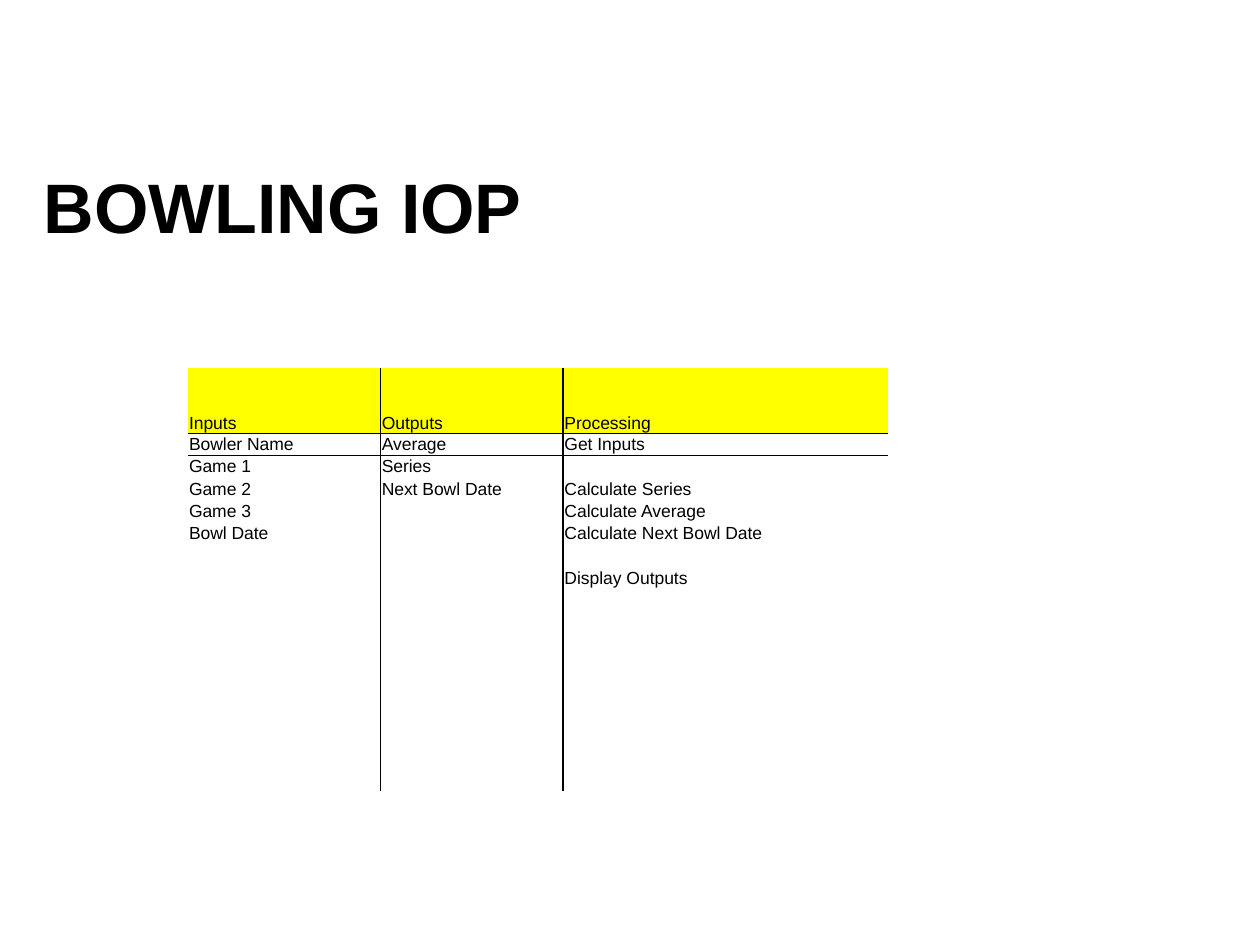
from pptx import Presentation
from pptx.util import Inches, Pt
from pptx.dml.color import RGBColor
from pptx.enum.text import MSO_ANCHOR as Anchor
from pptx.oxml.ns import qn
from lxml.etree import SubElement as Sub

# Content
TITLE = "BOWLING IOP"
COLS = [
    ("Inputs", 1.53, ["Bowler Name", "Game 1", "Game 2", "Game 3", "Bowl Date"]),
    ("Outputs", 1.45, ["Average", "Series", "Next Bowl Date"]),
    ("Processing", 2.58, ["Get Inputs", "", "Calculate Series", "Calculate Average",
                          "Calculate Next Bowl Date", "", "Display Outputs"]),
]
ROWS = 18
LEFT, TOP, TALL, HEAD = 1.49, 2.92, 3.48, 0.52
BLACK, YELLOW = "000000", "FFFF00"
NO_STYLE = "{2D5ABB26-0587-4C30-8999-92F81FD0307C}"
PAD = {"margin_left": 0.01, "margin_right": 0.01, "margin_top": 0.01, "margin_bottom": 0}


def color(code):
    return RGBColor.from_string(code)


def write(para, text, size, bold=False):
    run = para.add_run()
    run.text = text
    for key, val in {"name": "Arial", "size": Pt(size), "bold": bold}.items():
        setattr(run.font, key, val)
    run.font.color.rgb = color(BLACK)


def rule(cell, side):
    line = Sub(cell._tc.get_or_add_tcPr(), qn("a:ln" + side), w=str(Pt(1)))
    Sub(Sub(line, qn("a:solidFill")), qn("a:srgbClr"), val=BLACK)


deck = Presentation()
deck.slide_width, deck.slide_height = Inches(10), Inches(7.5)
slide = deck.slides.add_slide(deck.slide_layouts[6])

# Title
box = slide.shapes.add_textbox(Inches(0.25), Inches(1.25), Inches(9.42), Inches(1.08))
box.text_frame.word_wrap = True
write(box.text_frame.paragraphs[0], TITLE, 40, True)

# Table grid
wide = sum(width for _, width, _ in COLS)
table = slide.shapes.add_table(ROWS, len(COLS), Inches(LEFT), Inches(TOP),
                               Inches(wide), Inches(TALL)).table
table.first_row = table.horz_banding = False
table._tbl.tblPr.find(qn("a:tableStyleId")).text = NO_STYLE
step = (TALL - HEAD) / (ROWS - 1)
for r, row in enumerate(table.rows):
    row.height = Inches(step if r else HEAD)

# Cells, with rules between columns and under the heads
for c, (head, width, items) in enumerate(COLS):
    table.columns[c].width = Inches(width)
    lines = [head] + items
    for r in range(ROWS):
        cell = table.cell(r, c)
        for key, val in PAD.items():
            setattr(cell, key, Inches(val))
        body = r < ROWS - 1
        sides = {"L": body and c > 0, "R": body and c < len(COLS) - 1,
                 "T": r == 1, "B": r == 0}
        for side, shown in sides.items():
            if shown:
                rule(cell, side)
        if r == 0:
            cell.vertical_anchor = Anchor.BOTTOM
            cell.fill.solid()
            cell.fill.fore_color.rgb = color(YELLOW)
        else:
            cell.fill.background()
        para = cell.text_frame.paragraphs[0]
        if r < len(lines) and lines[r]:
            write(para, lines[r], 10)
        else:
            Sub(para._p, qn("a:endParaRPr"), sz="1000")

deck.save("out.pptx")
